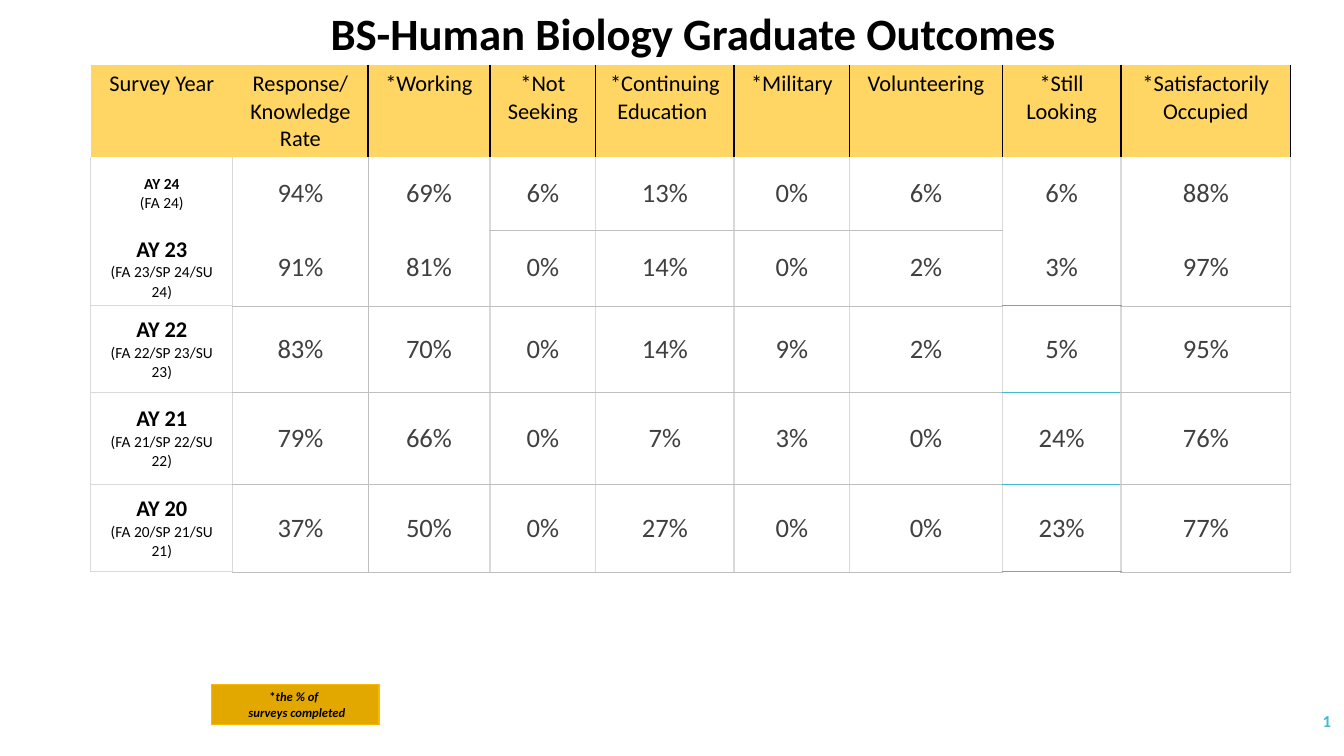
from dataclasses import dataclass

from lxml import etree
from pptx import Presentation
from pptx.dml.color import RGBColor
from pptx.enum.shapes import MSO_SHAPE
from pptx.enum.text import MSO_ANCHOR, MSO_AUTO_SIZE, PP_ALIGN
from pptx.oxml.ns import qn
from pptx.util import Inches, Pt

RECTANGLE = MSO_SHAPE.RECTANGLE
TOP, MIDDLE = MSO_ANCHOR.TOP, MSO_ANCHOR.MIDDLE
LEFT, CENTER, RIGHT = PP_ALIGN.LEFT, PP_ALIGN.CENTER, PP_ALIGN.RIGHT
GROW = MSO_AUTO_SIZE.SHAPE_TO_FIT_TEXT

BLACK = RGBColor(0x00, 0x00, 0x00)
WHITE = RGBColor(0xFF, 0xFF, 0xFF)
CHARCOAL = RGBColor(0x40, 0x40, 0x40)
SILVER = RGBColor(0xBF, 0xBF, 0xBF)
PALE_GREY = RGBColor(0xD9, 0xD9, 0xD9)
TEAL = RGBColor(0x40, 0xBA, 0xD2)
HEADER_GOLD = RGBColor(0xFF, 0xD6, 0x63)
NOTE_GOLD = RGBColor(0xE3, 0xA8, 0x00)
NOTE_EDGE = RGBColor(0xFA, 0xB9, 0x00)

FONT = "Calibri"
PLAIN_TABLE_STYLE = "{2D5ABB26-0587-4C30-8999-92F81FD0307C}"


@dataclass(frozen=True)
class Run:
    text: str
    size: float
    color: RGBColor = BLACK
    bold: bool = False
    italic: bool = False


@dataclass(frozen=True)
class Border:
    color: RGBColor | None
    width: float = 1


@dataclass(frozen=True)
class SurveyYear:
    name: str
    terms: str
    rates: tuple[int, ...]
    name_size: float = 16


HAIRLINE = Border(SILVER, 0.25)
GRID = Border(PALE_GREY)
ACCENT = Border(TEAL)
HEADER_RULE = Border(BLACK)
NO_LINE = Border(None)

HEADERS = [
    ("Survey Year",), ("Response/", "Knowledge", "Rate"), ("*Working",),
    ("*Not", "Seeking"), ("*Continuing Education ",), ("*Military",),
    ("Volunteering",), ("*Still Looking",), ("*Satisfactorily", "Occupied"),
]
YEARS = [
    SurveyYear("AY 24", "(FA 24)", (94, 69, 6, 13, 0, 6, 6, 88), 11),
    SurveyYear("AY 23", "(FA 23/SP 24/SU 24)", (91, 81, 0, 14, 0, 2, 3, 97)),
    SurveyYear("AY 22", "(FA 22/SP 23/SU 23)", (83, 70, 0, 14, 9, 2, 5, 95)),
    SurveyYear("AY 21", "(FA 21/SP 22/SU 22)", (79, 66, 0, 7, 3, 0, 24, 76)),
    SurveyYear("AY 20", "(FA 20/SP 21/SU 21)", (37, 50, 0, 27, 0, 0, 23, 77)),
]
COLUMN_WIDTHS = [1.41, 1.34, 1.21, 1.05, 1.37, 1.15, 1.51, 1.18, 1.68]
ROW_HEIGHTS = [0.91, 0.72, 0.72, 0.86, 0.91, 0.87]
YEAR_COL, RESPONSE_COL, WORKING_COL, LOOKING_COL = 0, 1, 2, 7
RULED_COLS = range(3, 7)  # columns with a line between AY 24 and AY 23


def write(frame, paragraphs: list[list[Run]], align=CENTER) -> None:
    for index, runs in enumerate(paragraphs):
        paragraph = frame.paragraphs[0] if index == 0 else frame.add_paragraph()
        paragraph.alignment = align
        for item in runs:
            run = paragraph.add_run()
            run.text = item.text
            run.font.name = FONT
            run.font.size = Pt(item.size)
            run.font.bold = item.bold
            run.font.italic = item.italic
            run.font.color.rgb = item.color


def add_text(slide, box, runs: list[Run], align):
    label = slide.shapes.add_textbox(*map(Inches, box))
    label.text_frame.word_wrap = True
    write(label.text_frame, [runs], align)
    return label


def add_panel(slide, box, fill: RGBColor, edge: RGBColor, width: float):
    panel = slide.shapes.add_shape(RECTANGLE, *map(Inches, box))
    panel.shadow.inherit = False
    panel.fill.solid()
    panel.fill.fore_color.rgb = fill
    panel.line.color.rgb = edge
    panel.line.width = Pt(width)
    return panel


def header_borders(col: int) -> dict[str, Border]:
    borders = {}
    if col > RESPONSE_COL:
        borders["L"] = HEADER_RULE
    if col >= RESPONSE_COL:
        borders["R"] = HEADER_RULE
    return borders


def year_borders(row: int, col: int) -> dict[str, Border]:
    level = {YEAR_COL: GRID, LOOKING_COL: ACCENT}.get(col, HAIRLINE)
    borders = {
        "L": HAIRLINE if col == WORKING_COL else GRID,
        "R": HAIRLINE if col == RESPONSE_COL else GRID,
    }
    if row > 2:
        borders["T"] = level
    elif row == 2 and col not in RULED_COLS:
        borders["T"] = NO_LINE
    borders["B"] = level
    return borders


def fill_cell(cell, paragraphs: list[list[Run]], fill: RGBColor, anchor,
              borders: dict[str, Border]) -> None:
    cell.margin_left = cell.margin_right = Inches(0.12)
    cell.margin_top = cell.margin_bottom = Inches(0.06)
    cell.vertical_anchor = anchor
    write(cell.text_frame, paragraphs)
    properties = cell._tc.get_or_add_tcPr()
    for side, border in borders.items():
        line = etree.SubElement(properties, qn(f"a:ln{side}"), w=str(Pt(border.width)))
        if border.color is None:
            etree.SubElement(line, qn("a:noFill"))
        else:
            paint = etree.SubElement(line, qn("a:solidFill"))
            etree.SubElement(paint, qn("a:srgbClr"), val=str(border.color))
    cell.fill.solid()
    cell.fill.fore_color.rgb = fill


def add_outcomes(slide) -> None:
    frame = slide.shapes.add_table(
        len(ROW_HEIGHTS), len(COLUMN_WIDTHS),
        Inches(0.9), Inches(0.64), Inches(11.9), Inches(5.03))
    outcomes = frame.table
    outcomes._tbl.tblPr.find(qn("a:tableStyleId")).text = PLAIN_TABLE_STYLE
    outcomes.horz_banding = False
    for column, width in zip(outcomes.columns, COLUMN_WIDTHS):
        column.width = Inches(width)
    for row, height in zip(outcomes.rows, ROW_HEIGHTS):
        row.height = Inches(height)

    for col, lines in enumerate(HEADERS):
        fill_cell(outcomes.cell(0, col), [[Run(line, 16)] for line in lines],
                  HEADER_GOLD, TOP, header_borders(col))
    for row, year in enumerate(YEARS, start=1):
        contents = [[[Run(year.name, year.name_size, bold=True)], [Run(year.terms, 11)]]]
        contents += [[[Run(f"{rate}%", 19, CHARCOAL)]] for rate in year.rates]
        for col, paragraphs in enumerate(contents):
            fill_cell(outcomes.cell(row, col), paragraphs, WHITE, MIDDLE,
                      year_borders(row, col))


def main() -> None:
    deck = Presentation()
    deck.slide_width, deck.slide_height = Inches(13.33), Inches(7.5)
    slide = deck.slides.add_slide(deck.slide_layouts[6])

    # Slide number
    number = add_text(slide, (11.63, 6.95, 1.67, 0.4),
                      [Run("1", 12, TEAL, bold=True)], RIGHT)
    number.text_frame.vertical_anchor = MIDDLE
    number.text_frame.paragraphs[0].space_after = Pt(6)

    # Outcomes by survey year
    add_outcomes(slide)

    # Footnote
    footnote = add_panel(slide, (2.1, 6.79, 1.66, 0.4), NOTE_GOLD, NOTE_EDGE, 0.75)
    footnote.text_frame.word_wrap = True
    footnote.text_frame.auto_size = GROW
    footnote.text_frame.vertical_anchor = TOP
    write(footnote.text_frame, [
        [Run("*", 9, bold=True), Run("the % of ", 9, bold=True, italic=True)],
        [Run(" surveys completed", 9, bold=True, italic=True)],
    ])

    # Title band
    add_panel(slide, (0, 0.01, 13.3, 0.63), WHITE, WHITE, 0.85)
    title = add_text(slide, (3.18, 0.01, 8.06, 0.64),
                     [Run("BS-Human Biology Graduate Outcomes", 32, bold=True)], LEFT)
    title.text_frame.auto_size = GROW

    deck.save("out.pptx")


if __name__ == "__main__":
    main()
